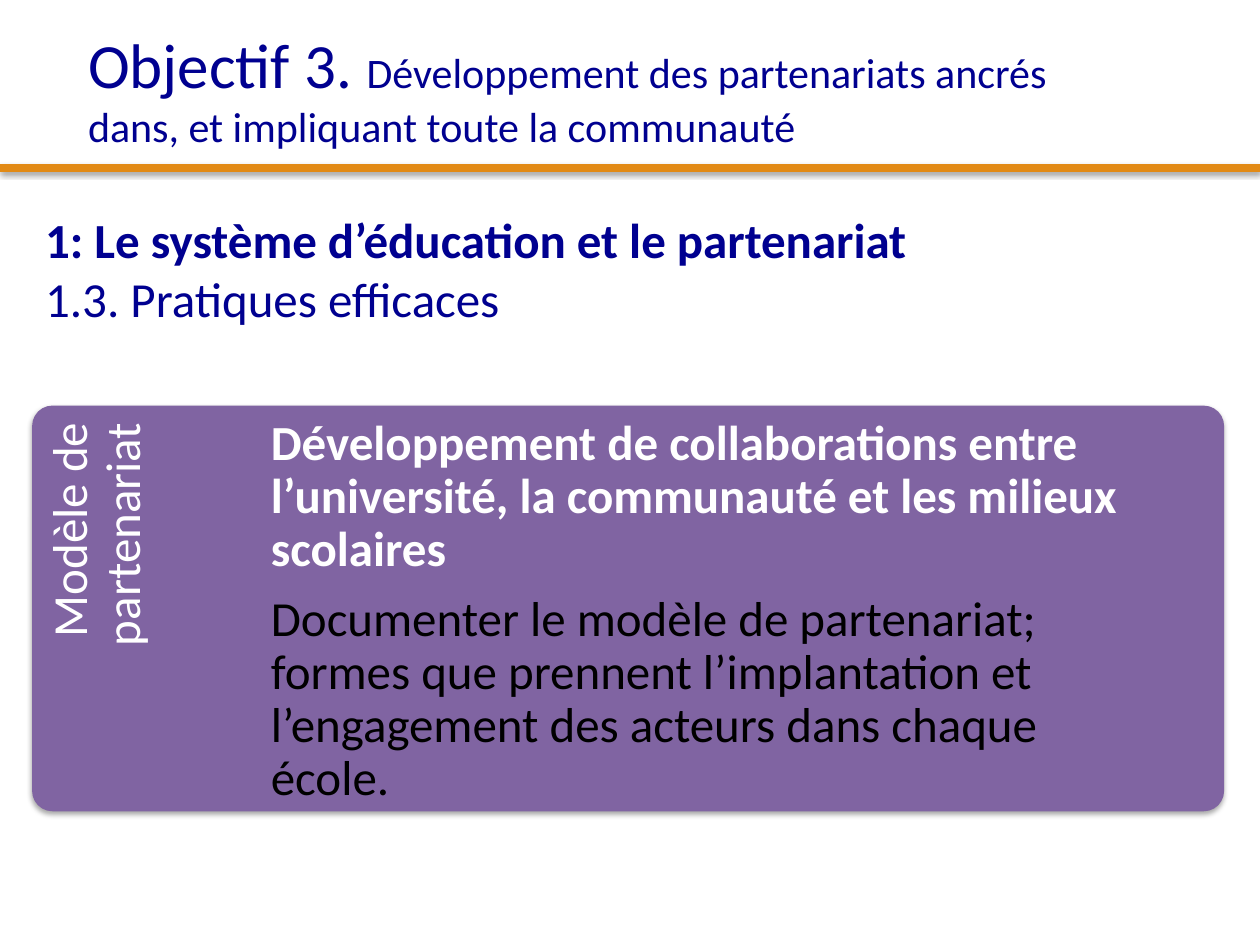
"""Builds the slide on partnership development in the education system."""
from lxml import etree
from pptx import Presentation
from pptx.dml.color import RGBColor
from pptx.enum.shapes import MSO_CONNECTOR, MSO_SHAPE
from pptx.enum.text import PP_ALIGN
from pptx.oxml.ns import qn
from pptx.util import Pt

ROUNDED = MSO_SHAPE.ROUNDED_RECTANGLE
STRAIGHT = MSO_CONNECTOR.STRAIGHT
LEFT, RIGHT = PP_ALIGN.LEFT, PP_ALIGN.RIGHT
NAVY, ORANGE, PURPLE = "000090", "E28A15", "8064A2"
WHITE, BLACK = "FFFFFF", "000000"


def rgb(value):
    return RGBColor.from_string(value)


class SlideBuilder:
    font = "Calibri"

    def __init__(self, slide):
        self.s = slide

    def style(self, font, size, color, bold=False):
        font.name, font.size, font.bold = self.font, Pt(size), bold
        font.color.rgb = rgb(color)

    def shadow(self, shape, dist, alpha):
        effects = etree.SubElement(shape._element.spPr, qn("a:effectLst"))
        outer = etree.SubElement(effects, qn("a:outerShdw"), blurRad=str(Pt(3.1)),
                                 dist=str(Pt(dist)), dir="5400000", rotWithShape="0")
        color = etree.SubElement(outer, qn("a:srgbClr"), val=BLACK)
        etree.SubElement(color, qn("a:alpha"), val=str(alpha * 1000))

    def rule(self, y, width, color, weight):
        line = self.s.shapes.add_connector(STRAIGHT, Pt(0), Pt(y), Pt(width), Pt(y))
        line.line.color.rgb = rgb(color)
        line.line.width = Pt(weight)
        self.shadow(line, 1.6, 38)

    def panel(self, x, y, w, h, color):
        sp = self.s.shapes.add_shape(ROUNDED, Pt(x), Pt(y), Pt(w), Pt(h))
        sp.adjustments[0] = 0.05
        sp.fill.solid()
        sp.fill.fore_color.rgb = rgb(color)
        sp.line.fill.background()
        self.shadow(sp, 1.8, 35)

    def text(self, x, y, w, h, paragraphs, insets=(7.2, 3.6, 7.2, 3.6),
             align=LEFT, spacing=1.0, after=0, rotation=0):
        sp = self.s.shapes.add_textbox(Pt(x), Pt(y), Pt(w), Pt(h))
        sp.rotation = rotation
        tf = sp.text_frame
        tf.word_wrap = True
        tf.margin_left, tf.margin_top, tf.margin_right, tf.margin_bottom = map(Pt, insets)
        for i, runs in enumerate(paragraphs):
            p = tf.add_paragraph() if i else tf.paragraphs[0]
            p.alignment, p.line_spacing, p.space_after = align, spacing, Pt(after)
            for content, *style in runs:
                r = p.add_run()
                r.text = content
                if len(runs) > 1:
                    self.style(r.font, *style)
            if len(runs) == 1:
                self.style(p.font, *runs[0][1:])


def main():
    prs = Presentation()
    prs.slide_width, prs.slide_height = Pt(720), Pt(540)
    b = SlideBuilder(prs.slides.add_slide(prs.slide_layouts[6]))

    b.text(18.7, 116, 644.4, 104.4, [
        [("1: Le système d’éducation et le partenariat", 28, NAVY, True)],
        [("1.3. Pratiques efficaces", 28, NAVY)],
    ])
    b.rule(95.8, 720, ORANGE, 4.5)
    b.text(43.2, 10.8, 591.1, 101.5, [
        [("Objectif 3. ", 36, NAVY),
         ("Développement des partenariats ancrés dans, et impliquant toute la communauté",
          24, NAVY)],
    ])

    top, height = 231.8, 231.8
    b.panel(18.4, top, 681.1, height, PURPLE)
    b.text(-8.6, 258.5, 190.1, 136.1, [[("Modèle de partenariat", 28, WHITE)]],
           insets=(0, 7.2, 10.1, 0), align=RIGHT, spacing=0.9, after=9.8, rotation=270)
    b.text(154.8, top, 507.6, height, [
        [("Développement de collaborations entre l’université, la communauté "
          "et les milieux scolaires", 28, WHITE, True)],
        [("Documenter le modèle de partenariat; formes que prennent l’implantation "
          "et l’engagement des acteurs dans chaque école.", 28, BLACK)],
    ], insets=(0, 7.2, 0, 0), spacing=0.9, after=9.8)

    prs.save("out.pptx")


if __name__ == "__main__":
    main()
